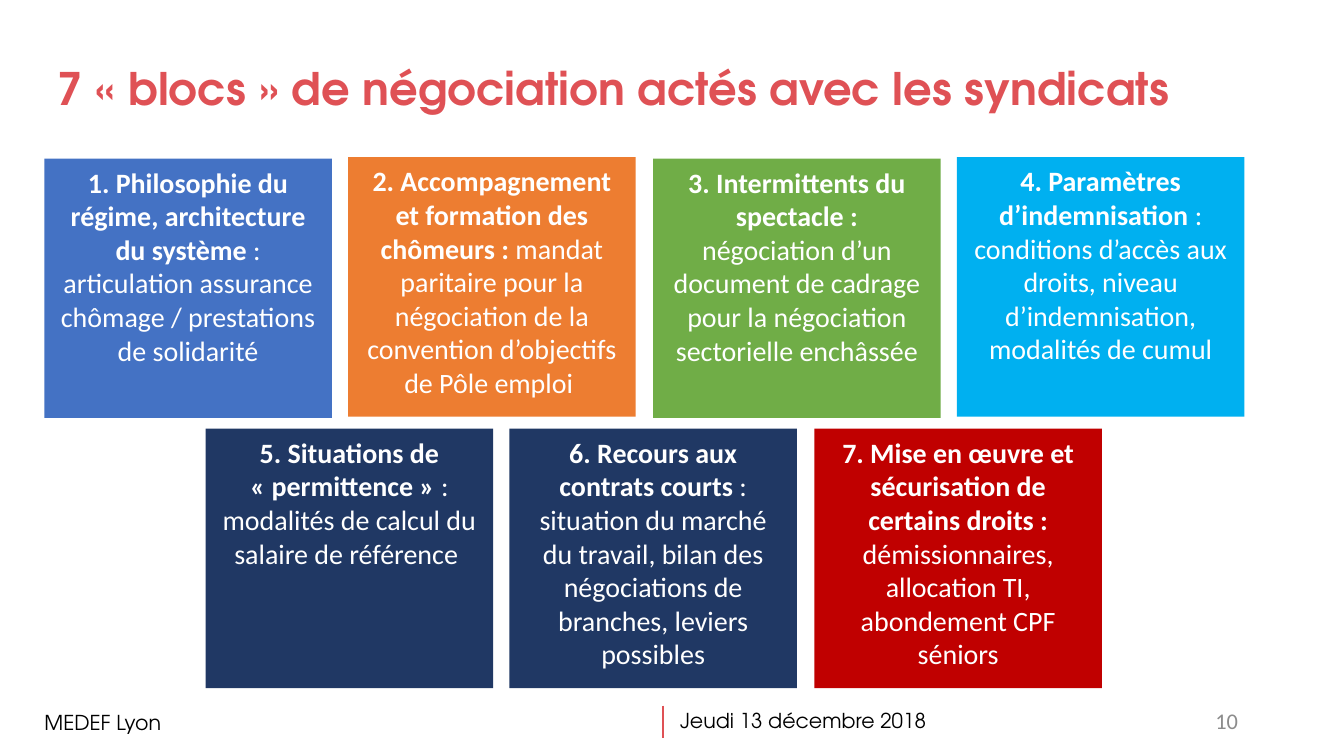
import pptx
import pptx.dml.color
import pptx.enum.shapes
import pptx.enum.text
import pptx.util
from lxml import etree

PX = 9144
ALIGN = pptx.enum.text.PP_ALIGN
ANCHOR = pptx.enum.text.MSO_ANCHOR
COLORS = {
    "accent": "DF5155", "black": "000000", "grey": "8C8C8C", "white": "FFFFFF",
    "blue": "4472C4", "orange": "ED7D31", "green": "70AD47", "sky": "00B0F0",
    "navy": "203864", "red": "C00000",
}
DISPLAY_FONT = "TeX Gyre Adventor"
BODY_FONT = "Calibri"
NO_BREAK_SPACE = chr(160)
BLOCK_WIDTH, BLOCK_HEIGHT, BLOCK_INSET = 214, 193, 11
TOP_ROW_SPAN = 679
TOP_ROW = [
    ("blue", 118, "1. Philosophie du régime, architecture du système ",
     ": articulation assurance chômage / prestations de solidarité"),
    ("orange", 117, "2. Accompagnement et formation des chômeurs : ",
     "mandat paritaire pour la négociation de la convention d’objectifs de Pôle emploi "),
    ("green", 118, "3. Intermittents du spectacle : ",
     "négociation d’un document de cadrage pour la négociation sectorielle enchâssée"),
    ("sky", 117, "4. Paramètres d’indemnisation ",
     ": conditions d’accès aux droits, niveau d’indemnisation, modalités de cumul"),
]
BOTTOM_ROW = [
    ("navy", 319, "5. Situations de «permittence» ",
     ": modalités de calcul du salaire de référence "),
    ("navy", 319, "6. Recours aux contrats courts ",
     ": situation du marché du travail, bilan des négociations de branches, leviers possibles"),
    ("red", 319, "7. Mise en œuvre et sécurisation de certains droits : ",
     "démissionnaires, allocation TI, abondement CPF séniors"),
]


def space_quotes(text):
    """Put the French no-break space inside each pair of guillemets."""
    return text.replace("«", "«" + NO_BREAK_SPACE).replace("»", NO_BREAK_SPACE + "»")


class SlideBuilder:
    """Holds the style and the current slide, and adds each kind of element."""

    def __init__(self, presentation):
        self.slide = presentation.slides.add_slide(presentation.slide_layouts[5])

    def box(self, left, top, width, height):
        return [pptx.util.Emu(value * PX) for value in (left, top, width, height)]

    def color(self, name):
        return pptx.dml.color.RGBColor.from_string(COLORS[name])

    def style(self, run, size, color, font, bold=False):
        run.font.size = pptx.util.Pt(size)
        run.font.name = font
        run.font.bold = bold
        run.font.color.rgb = self.color(color)

    def title(self, text, *box):
        shape = self.slide.shapes.title
        shape.left, shape.top, shape.width, shape.height = self.box(*box)
        frame = shape.text_frame
        frame.text = space_quotes(text)
        frame.word_wrap = True
        frame.auto_size = pptx.enum.text.MSO_AUTO_SIZE.NONE
        frame.vertical_anchor = ANCHOR.MIDDLE
        paragraph = frame.paragraphs[0]
        paragraph.alignment = ALIGN.LEFT
        paragraph.line_spacing = 0.9
        self.style(paragraph.runs[0], 24, "accent", DISPLAY_FONT, True)

    def label(self, text, box, size=11, color="black", font=DISPLAY_FONT,
              align=ALIGN.LEFT, anchor=ANCHOR.TOP, insets=(4, 4, 4, 4)):
        frame = self.slide.shapes.add_textbox(*self.box(*box)).text_frame
        frame.text = text
        frame.word_wrap = True
        frame.vertical_anchor = anchor
        (frame.margin_left, frame.margin_top,
         frame.margin_right, frame.margin_bottom) = self.box(*insets)
        frame.paragraphs[0].alignment = align
        self.style(frame.paragraphs[0].runs[0], size, color, font)

    def block(self, heading, detail, fill, left, top):
        shape = self.slide.shapes.add_shape(
            pptx.enum.shapes.MSO_SHAPE.RECTANGLE,
            *self.box(left, top, BLOCK_WIDTH, BLOCK_HEIGHT))
        shape.shadow.inherit = False
        shape.fill.solid()
        shape.fill.fore_color.rgb = self.color(fill)
        shape.line.fill.background()
        frame = shape.text_frame
        frame.word_wrap = True
        frame.vertical_anchor = ANCHOR.TOP
        frame.margin_left = frame.margin_right = pptx.util.Emu(BLOCK_INSET * PX)
        paragraph = frame.paragraphs[0]
        paragraph.alignment = ALIGN.CENTER
        for text, bold in ((heading, True), (detail, False)):
            run = paragraph.add_run()
            run.text = space_quotes(text)
            self.style(run, 15, "white", BODY_FONT, bold)

    def row(self, blocks, left):
        for index, (fill, top, heading, detail) in enumerate(blocks):
            offset = round(index * TOP_ROW_SPAN / (len(TOP_ROW) - 1))
            self.block(heading, detail, fill, left + offset, top)

    def line(self, *ends):
        connector = self.slide.shapes.add_connector(
            pptx.enum.shapes.MSO_CONNECTOR.STRAIGHT, *self.box(*ends))
        connector.line.color.rgb = self.color("accent")
        connector.line.width = pptx.util.Pt(1)
        properties = connector.element.spPr
        etree.SubElement(properties, pptx.oxml.ns.qn("a:effectLst"))


def main():
    presentation = pptx.Presentation()
    presentation.slide_width = pptx.util.Inches(10)
    presentation.slide_height = presentation.slide_width * 9 // 16
    builder = SlideBuilder(presentation)
    builder.label("MEDEF Lyon", (29, 524, 459, 26))
    builder.line(493, 525, 493, 549)
    builder.label("Jeudi 13 décembre 2018", (498, 523, 209, 26), insets=(8, 4, 4, 4))
    builder.title("7 «blocs» de négociation actés avec les syndicats", 33, 37, 892, 62)
    builder.label("10", (706, 521, 225, 30), 12, "grey", BODY_FONT,
                  ALIGN.RIGHT, ANCHOR.MIDDLE, (10, 5, 10, 5))
    builder.row(TOP_ROW, 33)
    builder.row(BOTTOM_ROW, 153)
    presentation.save("out.pptx")


if __name__ == "__main__":
    main()
